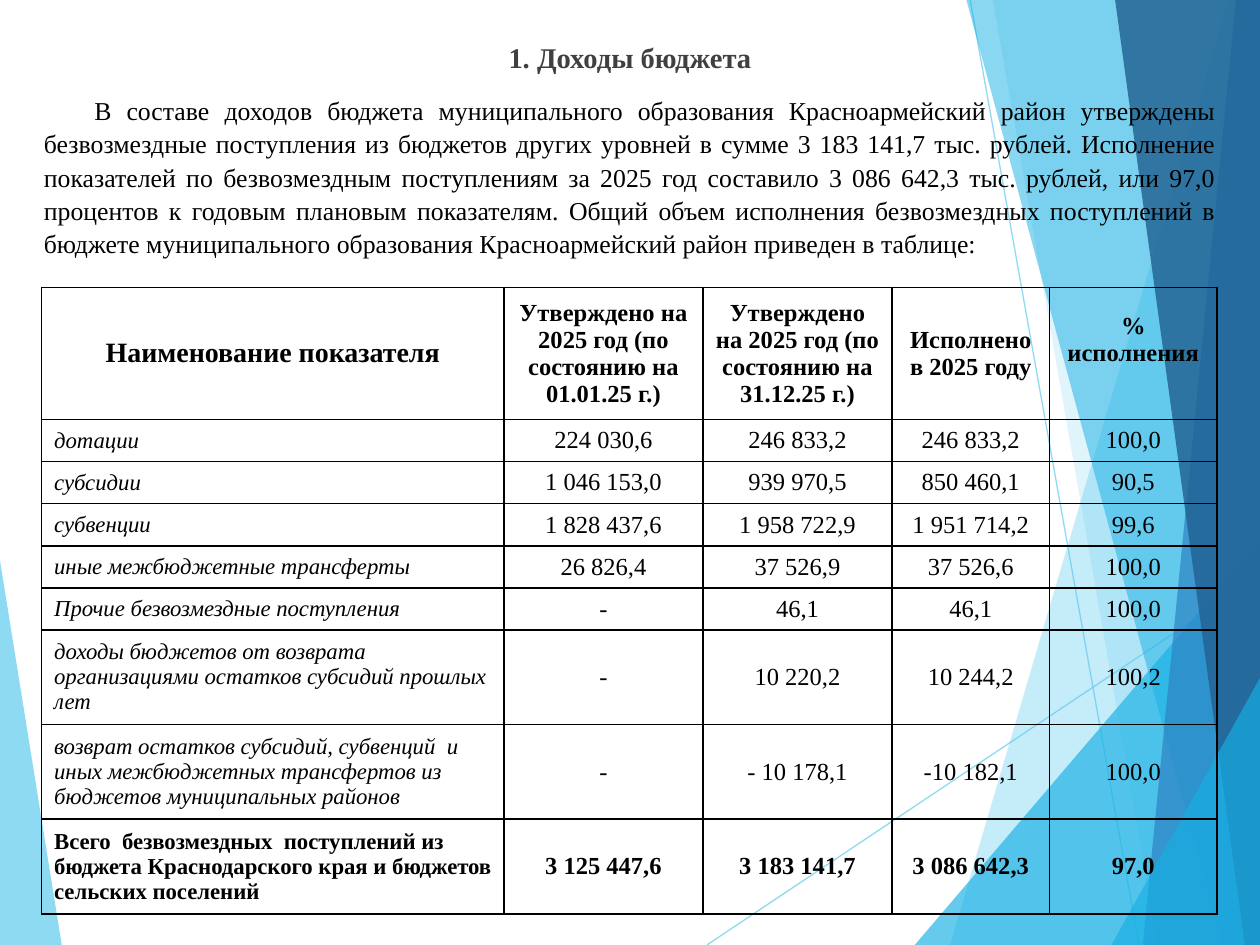
from lxml import etree
from pptx import Presentation
from pptx.dml.color import RGBColor
from pptx.enum.shapes import MSO_CONNECTOR
from pptx.enum.text import MSO_ANCHOR, PP_ALIGN
from pptx.oxml.ns import qn
from pptx.util import Inches, Pt

LINE = MSO_CONNECTOR.STRAIGHT
MIDDLE = MSO_ANCHOR.MIDDLE
LEFT, CENTER, JUSTIFY = PP_ALIGN.LEFT, PP_ALIGN.CENTER, PP_ALIGN.JUSTIFY

FACE = "Times New Roman"
BLACK = RGBColor(0x00, 0x00, 0x00)
GREY = RGBColor(0x40, 0x40, 0x40)
SKY = RGBColor(0x5F, 0xCB, 0xEF)
CYAN = RGBColor(0x17, 0xB0, 0xE4)
BLUE = RGBColor(0x2E, 0x83, 0xC3)
NAVY = RGBColor(0x22, 0x62, 0x92)

WEDGE = (SKY, 70, [(0, 4.45), (0.49, 7.5), (0, 7.5)])
RAYS = [(5.61, 7.5, 10, 4.57), (7.7, 0, 9.04, 7.5)]
FACETS = [
    (SKY, 36, [(9.75, 0), (7.54, 7.5), (10, 7.5), (10, 0)]),
    (SKY, 20, [(7.88, 0), (9.19, 7.5), (10, 7.5), (10, 0)]),
    (CYAN, 66, [(7.26, 7.5), (10, 4.29), (10, 7.5)]),
    (CYAN, 50, [(7.67, 0), (9.7, 7.5), (10, 7.5), (10, 0)]),
    (BLUE, 70, [(9.81, 0), (9.07, 7.5), (10, 7.5), (10, 0)]),
    (NAVY, 82, [(8.85, 0), (9.88, 7.5), (10, 7.5), (10, 0)]),
    (CYAN, 66, [(8.82, 7.5), (10, 5.38), (10, 7.5)]),
]

TITLE = "1. Доходы бюджета"
INTRO = (
    "В составе доходов бюджета муниципального образования Красноармейский район "
    "утверждены безвозмездные поступления из бюджетов других уровней в сумме "
    "3 183 141,7 тыс. рублей. Исполнение показателей по безвозмездным поступлениям "
    "за 2025 год составило 3 086 642,3 тыс. рублей, или 97,0 процентов к годовым "
    "плановым показателям. Общий объем исполнения безвозмездных поступлений в бюджете "
    "муниципального образования Красноармейский район приведен в таблице:"
)
WIDTHS = [3.67, 1.58, 1.5, 1.25, 1.33]
HEIGHTS = [1.05, 0.33, 0.33, 0.33, 0.33, 0.32, 0.69, 0.75, 0.69]
ROWS = [
    ("Наименование показателя",
     "Утверждено на 2025 год (по состоянию на 01.01.25 г.)",
     "Утверждено на 2025 год (по состоянию на 31.12.25 г.)",
     "Исполнено в 2025 году", "% исполнения"),
    ("дотации", "224 030,6", "246 833,2", "246 833,2", "100,0"),
    ("субсидии", "1 046 153,0", "939 970,5", "850 460,1", "90,5"),
    ("субвенции", "1 828 437,6", "1 958 722,9", "1 951 714,2", "99,6"),
    ("иные межбюджетные трансферты", "26 826,4", "37 526,9", "37 526,6", "100,0"),
    ("Прочие безвозмездные поступления", "-", "46,1", "46,1", "100,0"),
    ("доходы бюджетов от возврата организациями остатков субсидий прошлых лет",
     "-", "10 220,2", "10 244,2", "100,2"),
    ("возврат остатков субсидий, субвенций  и иных межбюджетных трансфертов "
     "из бюджетов муниципальных районов", "-", "- 10 178,1", "-10 182,1", "100,0"),
    ("Всего  безвозмездных  поступлений из бюджета Краснодарского края и бюджетов "
     "сельских поселений", "3 125 447,6", "3 183 141,7", "3 086 642,3", "97,0"),
]


def fade(fill, tone, alpha):
    """Make a fill solid in the tone at the given percent of opacity."""
    fill.solid()
    fill.fore_color.rgb = tone
    node = fill.fore_color._xFill.find(qn("a:srgbClr"))
    etree.SubElement(node, qn("a:alpha"), val=str(alpha * 1000))


def facet(slide, tone, alpha, points):
    """Draw a translucent polygon."""
    spots = [(Inches(x), Inches(y)) for x, y in points]
    pen = slide.shapes.build_freeform(*spots[0], scale=1.0)
    pen.add_line_segments(spots[1:], close=True)
    shape = pen.convert_to_shape()
    shape.shadow.inherit = False
    shape.line.fill.background()
    fade(shape.fill, tone, alpha)


def ray(slide, ends):
    """Draw a thin translucent line."""
    line = slide.shapes.add_connector(LINE, *map(Inches, ends))
    line.line.width = Pt(0.75)
    fade(line.line.fill, SKY, 70)
    etree.SubElement(line._element.spPr, qn("a:effectLst"))


def write(para, text, size, tone=BLACK, align=CENTER, bold=False, italic=False):
    """Put styled text in a paragraph."""
    para.alignment = align
    run = para.add_run()
    run.text = text
    style = {"name": FACE, "size": Pt(size), "bold": bold, "italic": italic}
    for key, value in style.items():
        setattr(run.font, key, value)
    run.font.color.rgb = tone


def intro(slide):
    """Add the heading and the opening paragraph."""
    box = slide.shapes.add_textbox(*map(Inches, (0.25, 0.25, 9.5, 1.75)))
    frame = box.text_frame
    frame.word_wrap = True
    head, body = frame.paragraphs[0], frame.add_paragraph()
    write(head, TITLE, 16.3, GREY, bold=True)
    write(body, INTRO, 14.7, align=JUSTIFY)
    body._p.get_or_add_pPr().set("indent", str(Inches(0.4)))
    body.space_before = Pt(10)
    for para in (head, body):
        para.line_spacing = 1.08


def border(cell):
    """Give a cell thin black edges and no fill."""
    props = cell._tc.get_or_add_tcPr()
    for side in "LRTB":
        edge = etree.SubElement(props, qn(f"a:ln{side}"), w=str(Pt(1)))
        solid = etree.SubElement(edge, qn("a:solidFill"))
        etree.SubElement(solid, qn("a:srgbClr"), val=str(BLACK))
    cell.fill.background()


def grid(slide):
    """Add the table of grants and transfers."""
    table = slide.shapes.add_table(
        len(ROWS), len(WIDTHS), Inches(0.33), Inches(2.28),
        Inches(sum(WIDTHS)), Inches(sum(HEIGHTS))).table
    table.first_row = table.horz_banding = False
    for col, width in zip(table.columns, WIDTHS):
        col.width = Inches(width)
    for row, height in zip(table.rows, HEIGHTS):
        row.height = Inches(height)
    last = len(ROWS) - 1
    for r, row in enumerate(ROWS):
        for c, text in enumerate(row):
            cell = table.cell(r, c)
            cell.vertical_anchor = MIDDLE
            border(cell)
            label = c == 0 and r > 0
            size = 13 if label else 16 if c == 0 else 14
            write(cell.text_frame.paragraphs[0], text, size,
                  align=LEFT if label else CENTER,
                  bold=r in (0, last), italic=label and r < last)
    table.cell(0, len(WIDTHS) - 1).margin_bottom = Inches(0.27)


def main():
    """Build and save the slide."""
    deck = Presentation()
    deck.slide_width, deck.slide_height = Inches(10), Inches(7.5)
    slide = deck.slides.add_slide(deck.slide_layouts[6])
    facet(slide, *WEDGE)
    for ends in RAYS:
        ray(slide, ends)
    for item in FACETS:
        facet(slide, *item)
    intro(slide)
    grid(slide)
    deck.save("out.pptx")


if __name__ == "__main__":
    main()
